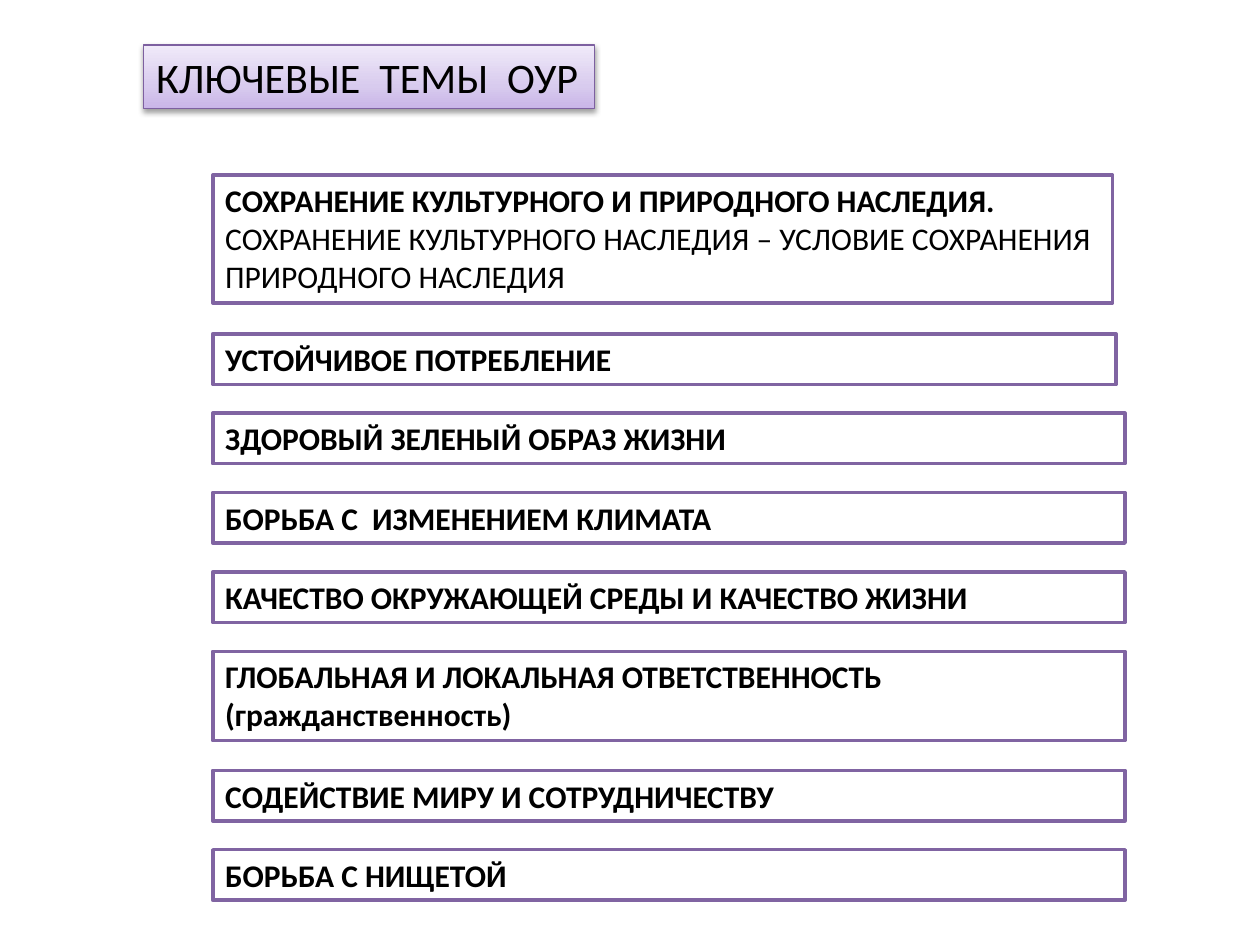
"""Builds a slide listing the key themes of education for sustainable development."""
from copy import deepcopy
from dataclasses import dataclass

from lxml.etree import SubElement
from pptx import Presentation
from pptx.dml.color import RGBColor
from pptx.enum.text import MSO_ANCHOR, MSO_AUTO_SIZE, PP_ALIGN
from pptx.oxml.ns import qn
from pptx.shapes.autoshape import Shape
from pptx.slide import Slide
from pptx.util import Cm, Pt

THEME_LEFT = 4.29
FIRST_THEME_TOP = 3.53
ROW_STEP = 0.8
LINE_HEIGHT = 0.78
BOX_PADDING = 0.24
TITLE_GRADIENT = ((0, "C9B5E8"), (0.35, "D8CBEE"), (1, "F0EAF9"))


@dataclass(frozen=True)
class Theme:
    heading: str
    details: tuple[str, ...] = ()
    lines: int = 1
    width: float = 18.39
    wrap: bool = True


THEMES = (
    Theme(
        "СОХРАНЕНИЕ КУЛЬТУРНОГО И ПРИРОДНОГО НАСЛЕДИЯ.",
        ("СОХРАНЕНИЕ КУЛЬТУРНОГО НАСЛЕДИЯ – УСЛОВИЕ СОХРАНЕНИЯ", "ПРИРОДНОГО НАСЛЕДИЯ"),
        lines=3,
        width=18.14,
        wrap=False,
    ),
    Theme("УСТОЙЧИВОЕ ПОТРЕБЛЕНИЕ", width=18.21),
    Theme("ЗДОРОВЫЙ ЗЕЛЕНЫЙ ОБРАЗ ЖИЗНИ"),
    Theme("БОРЬБА С  ИЗМЕНЕНИЕМ КЛИМАТА"),
    Theme("КАЧЕСТВО ОКРУЖАЮЩЕЙ СРЕДЫ И КАЧЕСТВО ЖИЗНИ"),
    Theme("ГЛОБАЛЬНАЯ И ЛОКАЛЬНАЯ ОТВЕТСТВЕННОСТЬ (гражданственность)", lines=2),
    Theme("СОДЕЙСТВИЕ МИРУ И СОТРУДНИЧЕСТВУ"),
    Theme("БОРЬБА С НИЩЕТОЙ"),
)


def color(value: str) -> RGBColor:
    """Turn a hex string into a colour."""
    return RGBColor.from_string(value)


def add_box(page: Slide, left: float, top: float, width: float, height: float,
            outline: str, outline_width: float, wrap: bool) -> Shape:
    """Add an outlined text box measured in centimetres."""
    box = page.shapes.add_textbox(Cm(left), Cm(top), Cm(width), Cm(height))
    box.line.color.rgb = color(outline)
    box.line.width = Pt(outline_width)
    frame_format = {
        "word_wrap": wrap,
        "auto_size": MSO_AUTO_SIZE.SHAPE_TO_FIT_TEXT,
        "vertical_anchor": MSO_ANCHOR.TOP,
    }
    for name, value in frame_format.items():
        setattr(box.text_frame, name, value)
    return box


def write(box: Shape, texts: tuple[str, ...], size: float, bold_first: bool) -> None:
    """Write one paragraph per text, the first one optionally bold."""
    frame = box.text_frame
    for index, text in enumerate(texts):
        para = frame.add_paragraph() if index else frame.paragraphs[0]
        para.alignment = PP_ALIGN.LEFT
        span = para.add_run()
        span.text = text
        font_format = {"name": "Calibri", "size": Pt(size), "bold": bold_first and index == 0}
        for name, value in font_format.items():
            setattr(span.font, name, value)
        span.font.color.rgb = color("000000")


def add_gradient(box: Shape) -> None:
    """Fill the box with the three-stop title gradient, rising from the bottom."""
    box.fill.gradient()
    box.fill.gradient_angle = 90
    stop_list = box.element.spPr.find(f".//{qn('a:gsLst')}")
    stop_list.append(deepcopy(stop_list[0]))
    for stop, (position, value) in zip(box.fill.gradient_stops, TITLE_GRADIENT):
        stop.position = position
        stop.color.rgb = color(value)


def add_shadow(box: Shape) -> None:
    """Give the box a soft shadow falling straight down."""
    effects = SubElement(box.element.spPr, qn("a:effectLst"))
    shadow = SubElement(effects, qn("a:outerShdw"), blurRad=str(Pt(3.1)),
                        dist=str(Pt(1.6)), dir="5400000", rotWithShape="0")
    tint = SubElement(shadow, qn("a:srgbClr"), val="000000")
    SubElement(tint, qn("a:alpha"), val="38000")


def draw_title(page: Slide) -> None:
    """Draw the shaded title box."""
    box = add_box(page, 2.9, 0.91, 9.09, 1.28, "7D60A0", 0.75, False)
    add_gradient(box)
    add_shadow(box)
    write(box, ("КЛЮЧЕВЫЕ  ТЕМЫ  ОУР",), 24, False)


def draw_theme(page: Slide, theme: Theme, top: float) -> None:
    """Draw one white theme box with a height set by its line count."""
    height = BOX_PADDING + LINE_HEIGHT * theme.lines
    box = add_box(page, THEME_LEFT, top, theme.width, height, "8064A2", 2, theme.wrap)
    box.fill.solid()
    box.fill.fore_color.rgb = color("FFFFFF")
    write(box, (theme.heading, *theme.details), 18, True)


def main() -> None:
    """Build and save the deck."""
    deck = Presentation()
    deck.slide_width, deck.slide_height = Cm(25.4), Cm(19.05)
    page = deck.slides.add_slide(deck.slide_layouts[6])
    draw_title(page)
    top = FIRST_THEME_TOP
    for theme in THEMES:
        draw_theme(page, theme, top)
        top += ROW_STEP * (theme.lines + 1)
    deck.save("out.pptx")


if __name__ == "__main__":
    main()
